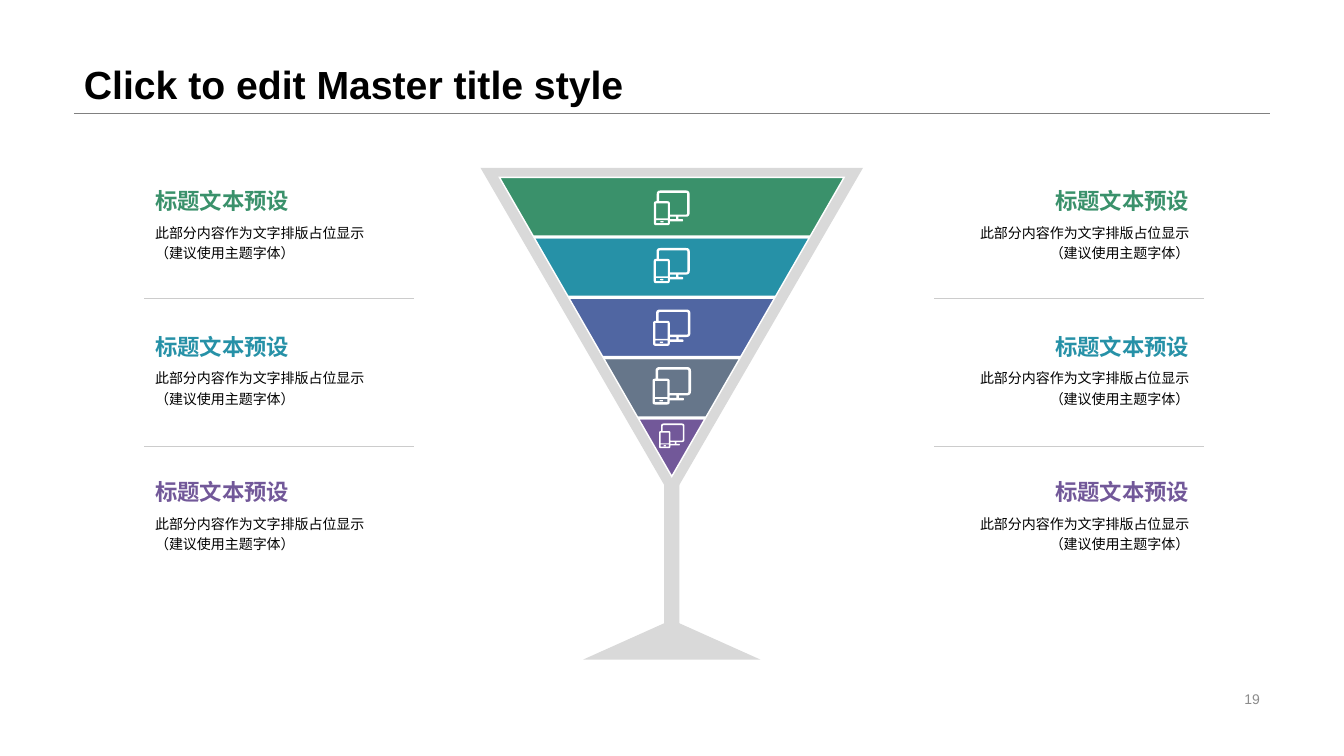
from copy import deepcopy

from pptx import Presentation
from pptx.dml.color import RGBColor
from pptx.enum.shapes import MSO_CONNECTOR, MSO_SHAPE
from pptx.enum.text import MSO_ANCHOR as ANCHOR, MSO_AUTO_SIZE, PP_ALIGN as ALIGN
from pptx.oxml.ns import qn
from pptx.oxml.xmlchemy import OxmlElement
from pptx.util import Cm, Pt

BLACK = RGBColor(0x00, 0x00, 0x00)
WHITE = RGBColor(0xFF, 0xFF, 0xFF)
GREEN = RGBColor(0x3A, 0x91, 0x6B)
TEAL = RGBColor(0x26, 0x91, 0xA7)
BLUE = RGBColor(0x50, 0x66, 0xA2)
SLATE = RGBColor(0x66, 0x76, 0x8A)
PURPLE = RGBColor(0x72, 0x58, 0x99)
GLASS = RGBColor(0xD9, 0xD9, 0xD9)
RULE = RGBColor(0x80, 0x80, 0x80)
DIVIDER = RGBColor(0xCC, 0xCC, 0xCC)
PAGE = RGBColor(0x8C, 0x8C, 0x8C)

HEADING = "标题文本预设"
BODY = "此部分内容作为文字排版占位显示\n（建议使用主题字体）"

CENTRE = 16.93
BOWL_TOP, BAND_H, BOWL_HALF = 4.45, 1.52, 4.38
RIM_TOP, RIM_HALF, RIM_TIP = 4.23, 4.82, 12.55
BANDS = [
    (GREEN, 4.8, 0.9),
    (TEAL, 6.25, 0.91),
    (BLUE, 7.8, 0.94),
    (SLATE, 9.25, 0.97),
    (PURPLE, 10.67, 0.64),
]

TEXT_TOP, TEXT_PITCH, TEXT_W = 4.72, 3.67, 7.26
COLUMNS = [(3.91, 3.63, ALIGN.LEFT), (22.71, 23.55, ALIGN.RIGHT)]
DIVIDER_TOPS, DIVIDER_W = (7.52, 11.25), 6.8

ICON_W = 38
DEVICES = [
    [(3, 0, 4), (38, 0, 4), (38, 28, 4), (26, 28, 0), (26, 30.5, 0),
     (31, 30.5, 1.2), (31, 33, 1.2), (17, 33, 0), (17, 37, 2.5),
     (0, 37, 2.5), (0, 11.5, 2.5), (3, 11.5, 0)],
    [(5.5, 2.5, 1.5), (35.5, 2.5, 1.5), (35.5, 25.7, 1.5), (17, 25.7, 0),
     (17, 11.5, 2.5), (5.5, 11.5, 0)],
    [(17, 28, 0), (23.7, 28, 0), (23.7, 30.5, 0), (17, 30.5, 0)],
    [(2.3, 13.7, 0), (14.8, 13.7, 0), (14.8, 29.8, 0), (2.3, 29.8, 0)],
    [(2.3, 31.5, 0), (14.8, 31.5, 0), (14.8, 34.8, 0), (2.3, 34.8, 0)],
    [(6.8, 32.6, 0.7), (10.3, 32.6, 0.7), (10.3, 34, 0.7), (6.8, 34, 0.7)],
]


def rounded(corners, steps=4):
    """Return the points of a square-cornered outline with its corners rounded."""
    points = []
    for i, (x, y, r) in enumerate(corners):
        if not r:
            points.append((x, y))
            continue
        ends = []
        for nx, ny, _ in (corners[i - 1], corners[(i + 1) % len(corners)]):
            reach = min(1, r / (abs(nx - x) + abs(ny - y)))
            ends.append((x + (nx - x) * reach, y + (ny - y) * reach))
        (ax, ay), (bx, by) = ends
        for k in range(steps + 1):
            t = k / steps
            u = 1 - t
            points.append((u * u * ax + 2 * u * t * x + t * t * bx,
                           u * u * ay + 2 * u * t * y + t * t * by))
    return points


class Slide:
    """Hold the style and the current slide."""

    font = "Arial"

    def __init__(self, prs):
        """Add a title-only slide."""
        self.s = prs.slides.add_slide(prs.slide_layouts[5])

    def fill_text(self, sp, text, align, fmt, spacing=None, anchor=ANCHOR.TOP):
        """Fill a shape with one formatted paragraph."""
        tf = sp.text_frame
        for name, value in dict(word_wrap=True, auto_size=MSO_AUTO_SIZE.NONE,
                                vertical_anchor=anchor).items():
            setattr(tf, name, value)
        p = tf.paragraphs[0]
        p.text = text
        p.alignment = align
        p.line_spacing = spacing
        fmt = dict(fmt, name=self.font)
        color = fmt.pop("color")
        for r in p.runs:
            for name, value in fmt.items():
                setattr(r.font, name, value)
            r.font.color.rgb = color
        for br in p._p.findall(qn("a:br")):
            br.append(deepcopy(p.runs[0]._r.rPr))

    def title(self, text, box):
        """Place and format the title."""
        sp = self.s.shapes.title
        for name, value in zip(("left", "top", "width", "height"), box):
            setattr(sp, name, Cm(value))
        self.fill_text(sp, text, ALIGN.LEFT, dict(size=Pt(28), bold=True, color=BLACK),
                       0.9, ANCHOR.BOTTOM)

    def text(self, text, box, align, fmt, inset=0, **layout):
        """Add a text box."""
        sp = self.s.shapes.add_textbox(*map(Cm, box))
        for side in ("left", "top", "right", "bottom"):
            setattr(sp.text_frame, "margin_" + side, Cm(inset))
        self.fill_text(sp, text, align, fmt, **layout)

    def line(self, left, top, width, color, weight):
        """Add a horizontal line."""
        sp = self.s.shapes.add_connector(MSO_CONNECTOR.STRAIGHT, Cm(left), Cm(top),
                                         Cm(left + width), Cm(top))
        sp.line.color.rgb = color
        sp.line.width = Pt(weight)
        sp._element.spPr.append(OxmlElement("a:effectLst"))

    def paint(self, sp, fill, outline=None):
        """Set the fill and the outline of a shape."""
        sp.shadow.inherit = False
        sp.fill.solid()
        sp.fill.fore_color.rgb = fill
        if outline is None:
            sp.line.fill.background()
        else:
            sp.line.color.rgb = outline
            sp.line.width = Pt(2.25)

    def shape(self, kind, box, fill):
        """Add a preset shape."""
        self.paint(self.s.shapes.add_shape(kind, *map(Cm, box)), fill)

    def outline(self, contours, fill, outline=None):
        """Add a freeform made of closed contours."""
        contours = [[(Cm(x), Cm(y)) for x, y in c] for c in contours]
        builder = self.s.shapes.build_freeform(*contours[0][0], scale=1.0)
        for i, (start, *rest) in enumerate(contours):
            if i:
                builder.move_to(*start)
            builder.add_line_segments(rest, close=True)
        self.paint(builder.convert_to_shape(), fill, outline)

    def icon(self, top, width):
        """Add the devices icon on the centre line."""
        k = width / ICON_W
        left = CENTRE - width / 2
        self.outline([[(left + x * k, top + y * k) for x, y in rounded(c)]
                      for c in DEVICES], WHITE)


def main():
    """Build the slide and save it."""
    prs = Presentation()
    prs.slide_width, prs.slide_height = Cm(33.87), Cm(19.05)
    s = Slide(prs)

    s.line(1.86, 2.85, 30.14, RULE, 0.25)
    s.title("Click to edit Master title style", (1.86, 0, 30.14, 2.85))
    s.text("19", (23.94, 17.33, 8.06, 0.58), ALIGN.RIGHT,
           dict(size=Pt(10), color=PAGE), inset=0.25, anchor=ANCHOR.MIDDLE)

    n = len(BANDS)
    for i, (color, _, _) in reversed(list(enumerate(BANDS))):
        upper, lower = (BOWL_HALF * (1 - j / n) for j in (i, i + 1))
        top = BOWL_TOP + i * BAND_H
        base = [(CENTRE + lower, top + BAND_H), (CENTRE - lower, top + BAND_H)]
        s.outline([[(CENTRE - upper, top), (CENTRE + upper, top)]
                   + (base if i < n - 1 else base[:1])], color, WHITE)

    s.outline([
        [(CENTRE - half, top), (CENTRE + half, top), (CENTRE, tip)]
        for half, top, tip in ((RIM_HALF, RIM_TOP, RIM_TIP),
                               (BOWL_HALF, BOWL_TOP, BOWL_TOP + n * BAND_H))
    ], GLASS)
    s.shape(MSO_SHAPE.RECTANGLE, (CENTRE - 0.19, 12.09, 0.38, 3.76), GLASS)
    s.shape(MSO_SHAPE.ISOSCELES_TRIANGLE, (CENTRE - 2.23, 15.62, 4.46, 1), GLASS)
    for _, top, width in BANDS:
        s.icon(top, width)

    for left, line_left, align in COLUMNS:
        for i, color in enumerate((GREEN, TEAL, PURPLE)):
            top = TEXT_TOP + i * TEXT_PITCH
            s.text(BODY, (left, top + 0.85, TEXT_W, 1.42), align,
                   dict(size=Pt(10), color=BLACK), spacing=1.2)
            s.text(HEADING, (left, top, TEXT_W, 0.86), align,
                   dict(size=Pt(16), bold=True, color=color))
        for top in DIVIDER_TOPS:
            s.line(line_left, top, DIVIDER_W, DIVIDER, 0.5)

    prs.save("out.pptx")


if __name__ == "__main__":
    main()
